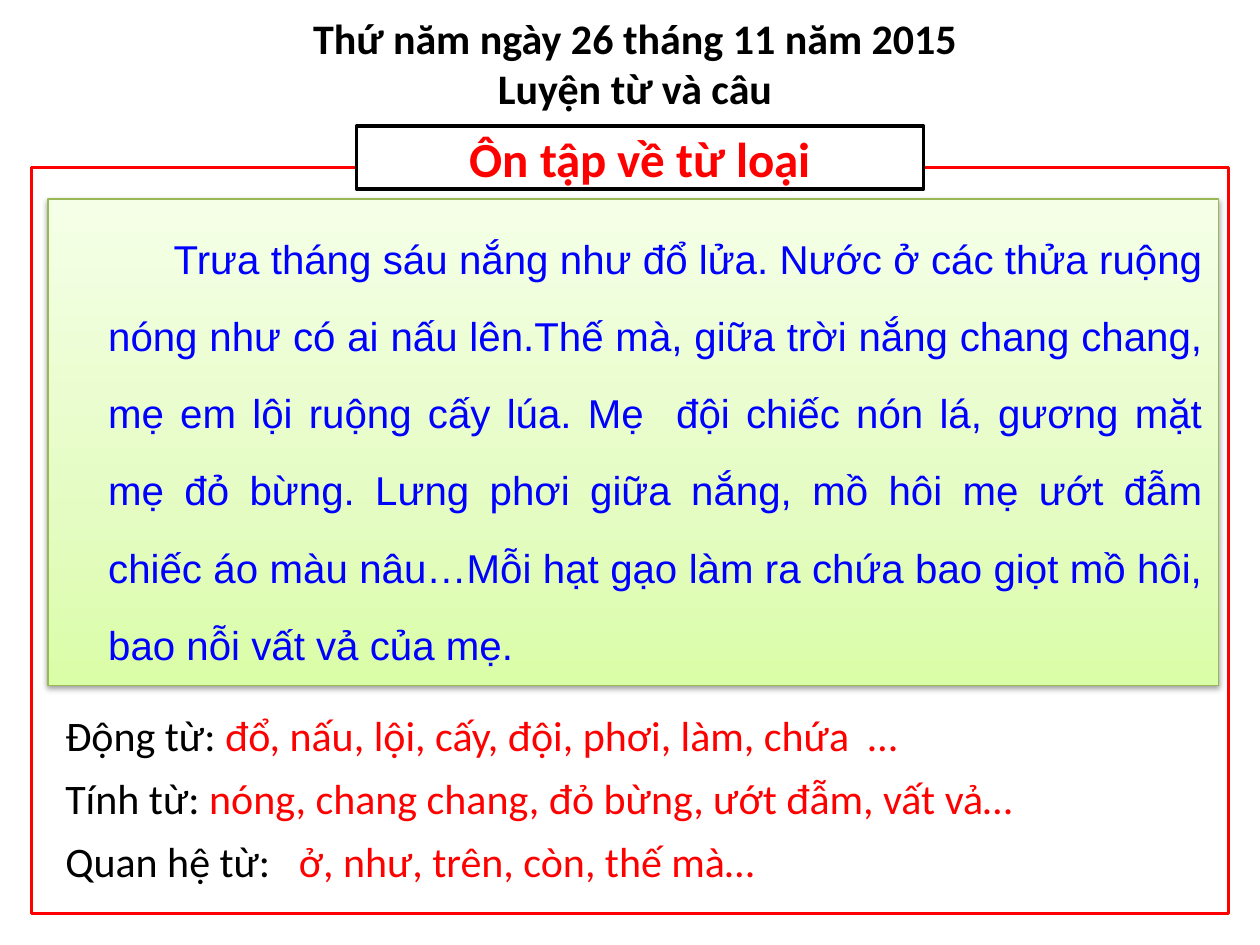
from lxml import etree
from pptx import Presentation
from pptx.dml.color import RGBColor
from pptx.enum.shapes import MSO_SHAPE
from pptx.enum.text import MSO_ANCHOR, PP_ALIGN
from pptx.oxml import parse_xml
from pptx.oxml.ns import nsdecls, qn
from pptx.util import Inches, Pt

RECTANGLE = MSO_SHAPE.RECTANGLE
TOP, MIDDLE = MSO_ANCHOR.TOP, MSO_ANCHOR.MIDDLE
LEFT, CENTER, JUSTIFY = PP_ALIGN.LEFT, PP_ALIGN.CENTER, PP_ALIGN.JUSTIFY

BLACK = RGBColor(0x00, 0x00, 0x00)
WHITE = RGBColor(0xFF, 0xFF, 0xFF)
RED = RGBColor(0xFF, 0x00, 0x00)
BLUE = RGBColor(0x00, 0x00, 0xFF)
LEAF = RGBColor(0x98, 0xB9, 0x55)
GREEN_STOPS = [
    (0, RGBColor(0xDA, 0xFD, 0xA7)),
    (35, RGBColor(0xE4, 0xFC, 0xC2)),
    (100, RGBColor(0xF5, 0xFF, 0xE7)),
]

PASSAGE = (
    "Trưa tháng sáu nắng như đổ lửa. Nước ở các thửa ruộng nóng như có ai nấu lên."
    "Thế mà, giữa trời nắng chang chang, mẹ em lội ruộng cấy lúa. Mẹ  đội chiếc nón lá, "
    "gương mặt mẹ đỏ bừng. Lưng phơi giữa nắng, mồ hôi mẹ ướt đẫm chiếc áo màu nâu…"
    "Mỗi hạt gạo làm ra chứa bao giọt mồ hôi, bao nỗi vất vả của mẹ."
)
WORD_CLASSES = [
    ("Động từ: ", "đổ, nấu, lội, cấy, đội, phơi, làm, chứa  …"),
    ("Tính từ: ", "nóng, chang chang, đỏ bừng, ướt đẫm, vất vả…"),
    ("Quan hệ từ:   ", "ở, như, trên, còn, thế mà…"),
]


def add_span(para, text, size=24, font="Calibri", color=BLACK, bold=False):
    span = para.add_run()
    span.text = text
    span.font.size = Pt(size)
    span.font.name = font
    span.font.color.rgb = color
    span.font.bold = bold


def start_para(shape, align=LEFT, anchor=TOP, margin=0, indent=0, before=0, spacing=1.0):
    frame = shape.text_frame
    frame.word_wrap = True
    frame.vertical_anchor = anchor
    para = frame.paragraphs[0]
    para.alignment = align
    para.space_before = Pt(before)
    para.line_spacing = spacing
    properties = para._p.get_or_add_pPr()
    properties.set("marL", str(Inches(margin)))
    properties.set("indent", str(Inches(indent)))
    return para


def add_panel(page, box, line, width):
    panel = page.shapes.add_shape(RECTANGLE, *map(Inches, box))
    panel.shadow.inherit = False
    panel.fill.solid()
    panel.fill.fore_color.rgb = WHITE
    panel.line.color.rgb = line
    panel.line.width = Pt(width)
    return panel


def add_green_finish(panel):
    """Give the panel an upward gradient and a soft shadow below."""
    stops = "".join(
        f'<a:gs pos="{place * 1000}"><a:srgbClr val="{color}"/></a:gs>'
        for place, color in GREEN_STOPS
    )
    gradient = parse_xml(
        f'<a:gradFill {nsdecls("a")} rotWithShape="1"><a:gsLst>{stops}</a:gsLst>'
        '<a:lin ang="16200000" scaled="1"/></a:gradFill>'
    )
    properties = panel._element.spPr
    properties.replace(properties.find(qn("a:solidFill")), gradient)
    shadow = etree.SubElement(
        properties.find(qn("a:effectLst")), qn("a:outerShdw"),
        blurRad=str(Pt(3.1)), dist=str(Pt(1.6)), dir="5400000", rotWithShape="0",
    )
    color = etree.SubElement(shadow, qn("a:srgbClr"), val=str(BLACK))
    etree.SubElement(color, qn("a:alpha"), val="38000")


def add_heading(page, box):
    heading = page.shapes.add_textbox(*map(Inches, box))
    para = start_para(heading, align=CENTER, anchor=MIDDLE)
    add_span(para, "Thứ năm ngày 26 tháng 11 năm 2015", bold=True)
    para.add_line_break()
    add_span(para, "Luyện từ và câu", bold=True)


def add_lesson_title(page, box):
    panel = add_panel(page, box, BLACK, 2)
    para = start_para(panel, align=CENTER, anchor=MIDDLE)
    add_span(para, "Ôn tập về từ loại", size=28, color=RED, bold=True)


def add_passage(page, box):
    panel = add_panel(page, box, LEAF, 0.75)
    add_green_finish(panel)
    panel.text_frame.margin_right = Inches(0.11)
    para = start_para(panel, align=JUSTIFY, margin=0.38, indent=0.52, before=4.6, spacing=1.6)
    add_span(para, PASSAGE, size=23, font="Arial", color=BLUE)


def add_word_classes(page, box):
    left, top, width, height = box
    row_height = height / len(WORD_CLASSES)
    for row, (label, words) in enumerate(WORD_CLASSES):
        place = (left, top + row * row_height, width, row_height)
        line = page.shapes.add_textbox(*map(Inches, place))
        para = start_para(line, margin=0.38, indent=-0.38, before=4.8)
        add_span(para, label)
        add_span(para, words, color=RED)


def main():
    deck = Presentation()
    deck.slide_width, deck.slide_height = Inches(10), Inches(7.5)
    page = deck.slides.add_slide(deck.slide_layouts[6])

    add_panel(page, (0.25, 1.33, 9.5, 5.92), RED, 2)  # outer frame
    add_heading(page, (0.33, 0, 9.42, 1))
    add_lesson_title(page, (2.83, 1, 4.5, 0.5))
    add_passage(page, (0.38, 1.58, 9.29, 3.86))
    add_word_classes(page, (0.42, 5.58, 9.17, 1.5))

    deck.save("out.pptx")


if __name__ == "__main__":
    main()
